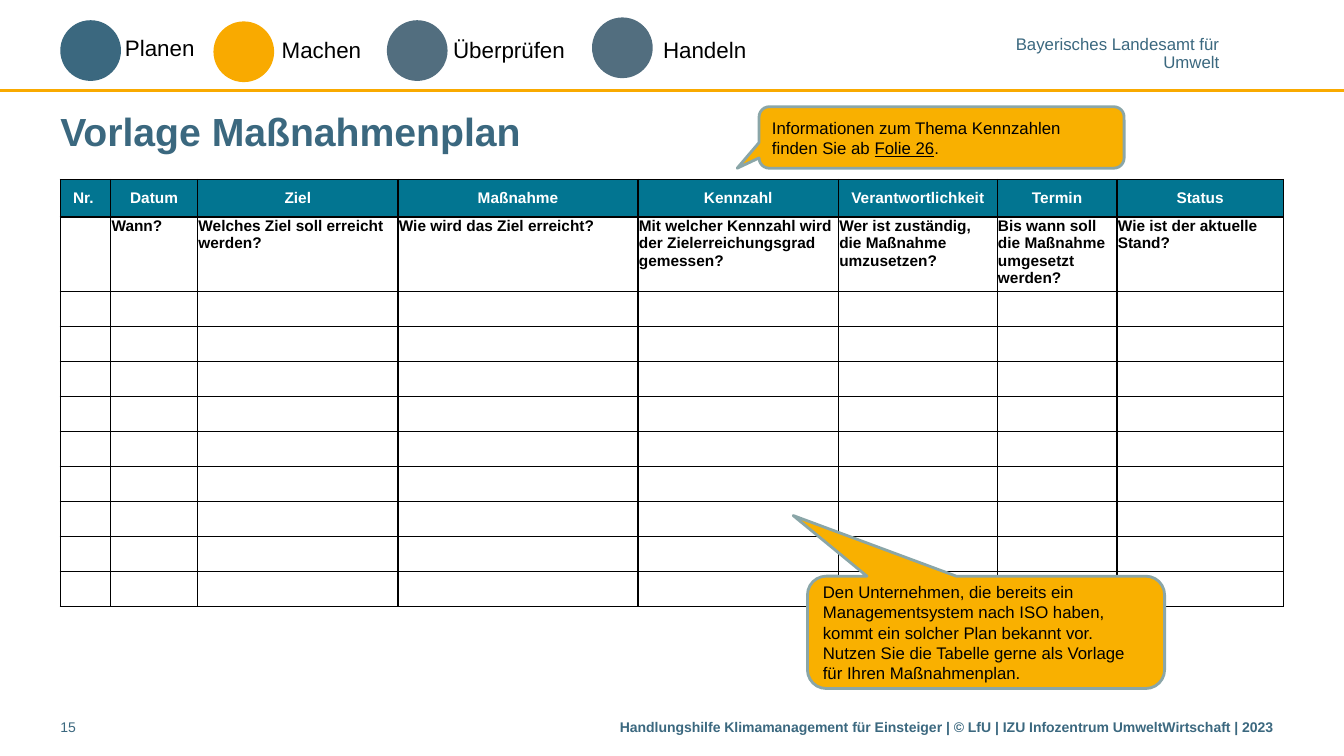
from lxml import etree
from pptx import Presentation
from pptx import util as u
from pptx.dml import color
from pptx.enum import shapes, text
from pptx.oxml import ns

FONT = "Arial"
BLUE, ORANGE, GREY = "3B687F", "F9AA00", "526E7F"
BLACK, WHITE = "000000", "FFFFFF"
TEAL, AMBER, SAGE = "027591", "F9B000", "8AA6A8"

PHASES = [
    ("Planen", BLUE, 0, 0.07, 1.38, 0.3),
    ("Machen", ORANGE, 3.86, 0.1, 5.33, 0.35),
    ("Überprüfen", GREY, 8.23, 0.07, 9.65, 0.33),
    ("Handeln", GREY, 13.4, 0, 14.94, 0.33),
]
COLUMNS = [
    ("Nr. ", "", 1.27),
    ("Datum", "Wann?", 2.19),
    ("Ziel", "Welches Ziel soll erreicht werden?", 5.05),
    ("Maßnahme", "Wie wird das Ziel erreicht?", 6.05),
    ("Kennzahl", "Mit welcher Kennzahl wird der Zielerreichungsgrad gemessen?", 5.05),
    ("Verantwortlichkeit", "Wer ist zuständig, die Maßnahme umzusetzen?", 4.0),
    ("Termin", "Bis wann soll die Maßnahme umgesetzt werden? ", 3.02),
    ("Status", "Wie ist der aktuelle Stand?", 4.19),
]
EMPTY_ROWS = 9


def rgb(value):
    """Turn a hex string into a colour."""
    return color.RGBColor.from_string(value)


def write(para, words, size, tint, bold=False, underline=False):
    """Add one formatted run to a paragraph."""
    span = para.add_run()
    span.text = words
    font = span.font
    font.name, font.size, font.bold = FONT, u.Pt(size), bold
    font.color.rgb = rgb(tint)
    if underline:
        font.underline = True


def add_text(page, box, words, size, tint, bold=False, insets=(0.25, 0.13)):
    """Add a wrapping text box with one paragraph and return its frame."""
    frame = page.shapes.add_textbox(*map(u.Cm, box)).text_frame
    frame.word_wrap = True
    frame.margin_left = frame.margin_right = u.Cm(insets[0])
    frame.margin_top = frame.margin_bottom = u.Cm(insets[1])
    write(frame.paragraphs[0], words, size, tint, bold)
    return frame


def add_rule(page, box):
    """Draw the orange line along the bottom of the header."""
    left, top, width, height = box
    bottom = top + height
    rule = page.shapes.add_connector(
        shapes.MSO_CONNECTOR.STRAIGHT,
        u.Cm(left), u.Cm(bottom), u.Cm(left + width), u.Cm(bottom))
    rule.line.color.rgb = rgb(ORANGE)
    rule.line.width = u.Pt(2)
    etree.SubElement(rule.element.spPr, ns.qn("a:effectLst"))


def add_agency(page, box):
    """Place the name of the agency on two right-aligned lines."""
    frame = add_text(page, box, "Bayerisches Landesamt für", 12, BLUE, insets=(0, 0))
    frame.word_wrap = False
    write(frame.add_paragraph(), "Umwelt", 12, BLUE)
    for para in frame.paragraphs:
        para.alignment = text.PP_ALIGN.RIGHT
        para.line_spacing = 0.85


def add_phases(page, box):
    """Place the four phase circles with their labels."""
    left, top, width, height = box
    for label, tint, circle_x, circle_y, label_x, label_y in PHASES:
        circle = page.shapes.add_shape(
            shapes.MSO_SHAPE.OVAL, u.Cm(left + circle_x), u.Cm(top + circle_y),
            u.Cm(1.53), u.Cm(1.53))
        circle.shadow.inherit = False
        circle.fill.solid()
        circle.fill.fore_color.rgb = rgb(tint)
        circle.line.fill.background()
        add_text(page, (left + label_x, top + label_y, 3.5, 0.94), label, 16, BLACK)


def add_title(page, box):
    """Place the slide title."""
    frame = add_text(page, box, "Vorlage Maßnahmenplan", 28, BLUE, True, (0, 0.13))
    frame.vertical_anchor = text.MSO_ANCHOR.MIDDLE


def style_cell(cell, fill=None):
    """Give a cell black borders, narrow margins and an optional fill."""
    cell.margin_left = cell.margin_right = cell.margin_top = u.Cm(0.02)
    cell.margin_bottom = 0
    props = cell._tc.get_or_add_tcPr()
    for side in ("lnL", "lnR", "lnT", "lnB"):
        line = etree.SubElement(props, ns.qn(f"a:{side}"), w=str(u.Pt(1)))
        paint = etree.SubElement(line, ns.qn("a:solidFill"))
        etree.SubElement(paint, ns.qn("a:srgbClr"), val=BLACK)
    if fill:
        cell.fill.solid()
        cell.fill.fore_color.rgb = rgb(fill)
    else:
        cell.fill.background()


def add_plan(page, box):
    """Build the action plan table with headings, questions and empty rows."""
    heights = [0.95, 1.74] + [0.88] * EMPTY_ROWS
    table = page.shapes.add_table(len(heights), len(COLUMNS), *map(u.Cm, box)).table
    for row, height in zip(table.rows, heights):
        row.height = u.Cm(height)
    for index, (heading, question, width) in enumerate(COLUMNS):
        table.columns[index].width = u.Cm(width)
        for row_index in range(len(heights)):
            style_cell(table.cell(row_index, index), None if row_index else TEAL)
        head = table.cell(0, index)
        head.vertical_anchor = text.MSO_ANCHOR.MIDDLE
        para = head.text_frame.paragraphs[0]
        para.alignment = text.PP_ALIGN.CENTER
        write(para, heading, 11, WHITE, True)
        if question:
            write(table.cell(1, index).text_frame.paragraphs[0], question, 11, BLACK, True)


def add_callout(page, box, tip, spans):
    """Place an amber speech bubble whose tail ends at the given tip."""
    bubble = page.shapes.add_shape(
        shapes.MSO_SHAPE.ROUNDED_RECTANGULAR_CALLOUT, *map(u.Cm, box))
    bubble.shadow.inherit = False
    bubble.adjustments[0], bubble.adjustments[1] = tip
    bubble.fill.solid()
    bubble.fill.fore_color.rgb = rgb(AMBER)
    bubble.line.color.rgb = rgb(SAGE)
    bubble.line.width = u.Pt(2)
    frame = bubble.text_frame
    frame.word_wrap = True
    frame.vertical_anchor = text.MSO_ANCHOR.MIDDLE
    para = frame.paragraphs[0]
    para.alignment = text.PP_ALIGN.LEFT
    for words, underline in spans:
        write(para, words, 12, BLACK, underline=underline)


def add_footer(page, box):
    """Place the page number and the copyright line."""
    left, top, width, height = box
    add_text(page, (left, top, 0.76, height), "15", 10, BLUE, insets=(0, 0.13))
    add_text(
        page, (left + 14.1, top, width - 14.1, height),
        "Handlungshilfe Klimamanagement für Einsteiger | © LfU | "
        "IZU Infozentrum UmweltWirtschaft | 2023", 10, BLUE, True, (0, 0.13))


def main():
    """Build the slide and save the deck."""
    deck = Presentation()
    deck.slide_width, deck.slide_height = u.Cm(33.87), u.Cm(19.05)
    page = deck.slides.add_slide(deck.slide_layouts[6])
    add_rule(page, (0, 0, 33.87, 2.29))
    add_agency(page, (25.57, 0.94, 5.16, 0.86))
    add_phases(page, (1.52, 0.44, 22, 1.63))
    add_title(page, (1.52, 2.6, 31.27, 1.4))
    add_plan(page, (1.52, 4.52, 30.82, 10.61))
    add_callout(page, (20.35, 14.52, 9, 2.83), (-0.54, -1.04), [
        ("Den Unternehmen, die bereits ein Managementsystem nach ISO haben, "
         "kommt ein solcher Plan bekannt vor. Nutzen Sie die Tabelle gerne als "
         "Vorlage für Ihren Maßnahmenplan.", False)])
    add_callout(page, (19.13, 2.69, 9.2, 1.55), (-0.56, 0.5), [
        ("Informationen zum Thema Kennzahlen finden Sie ab ", False),
        ("Folie 26", True), (".", False)])
    add_footer(page, (1.52, 17.98, 31.27, 0.79))
    deck.save("out.pptx")


if __name__ == "__main__":
    main()
